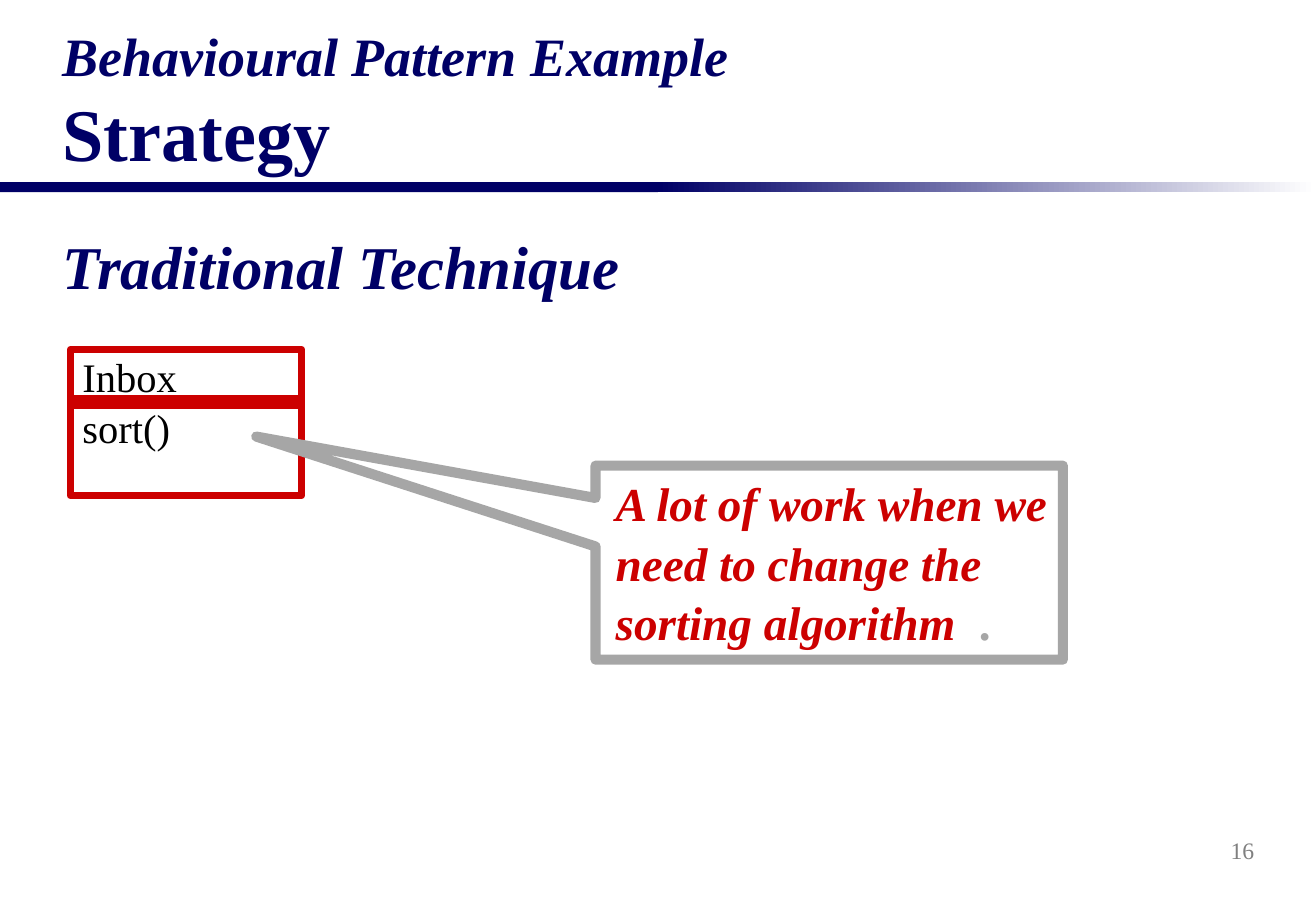
from dataclasses import dataclass

from lxml.etree import SubElement
from pptx import Presentation
from pptx.dml.color import RGBColor
from pptx.enum.shapes import MSO_CONNECTOR as Connector
from pptx.enum.shapes import MSO_SHAPE as Preset
from pptx.enum.text import MSO_ANCHOR as Anchor
from pptx.enum.text import PP_ALIGN as Align
from pptx.oxml.ns import qn
from pptx.shapes.autoshape import Shape
from pptx.slide import Slide
from pptx.util import Pt

FONT = "Times New Roman"
NAVY, RED, GRAY, WHITE = "000066", "CC0000", "A6A6A6", "FFFFFF"


@dataclass(frozen=True)
class Box:
    left: float
    top: float
    width: float
    height: float


@dataclass(frozen=True)
class Style:
    size: float
    color: str
    bold: bool = False
    italic: bool = False


@dataclass(frozen=True)
class Label:
    box: Box
    text: str
    styles: tuple[Style, ...]
    anchor: Anchor = Anchor.TOP
    align: Align = Align.LEFT
    space_before: float = 0


BAND_TOP, BAND_HEIGHT, BAND_WIDTH = 108, 6, 390
CLASS_BOX = Box(41.75, 207.25, 137, 86.5)
DIVIDER_TOP = 238.25
CALLOUT_BOX = Box(353, 276, 277, 115)

HEADING = Style(36, NAVY, bold=True, italic=True)
CLASS_TEXT = Style(24, "000000")
WARNING = Style(28, RED, bold=True, italic=True)

LABELS = (
    Label(Box(587.5, 486, 163, 36), "16", (Style(14, "808080"),),
          Anchor.MIDDLE, Align.RIGHT),
    Label(Box(30, 24, 720, 84), "Behavioural Pattern Example\vStrategy",
          (Style(32, NAVY, bold=True, italic=True), Style(44, NAVY, bold=True)),
          Anchor.BOTTOM),
    Label(Box(30, 132, 720, 54), "Traditional Technique", (HEADING,),
          space_before=7.2),
)


def rgb(color: str) -> RGBColor:
    return RGBColor.from_string(color)


def format_text(shape: Shape, styles: tuple[Style, ...]) -> None:
    runs = [run for paragraph in shape.text_frame.paragraphs for run in paragraph.runs]
    for run, style in zip(runs, styles):
        run.font.name = FONT
        run.font.size = Pt(style.size)
        run.font.bold = style.bold
        run.font.italic = style.italic
        run.font.color.rgb = rgb(style.color)


def add_label(slide: Slide, label: Label) -> None:
    box = label.box
    shape = slide.shapes.add_textbox(
        Pt(box.left), Pt(box.top), Pt(box.width), Pt(box.height))
    frame = shape.text_frame
    frame.word_wrap = True
    frame.vertical_anchor = label.anchor
    paragraph = frame.paragraphs[0]
    paragraph.text = label.text
    paragraph.alignment = label.align
    paragraph.space_before = Pt(label.space_before)
    format_text(shape, label.styles)


def add_block(slide: Slide, preset: Preset, box: Box) -> Shape:
    shape = slide.shapes.add_shape(
        preset, Pt(box.left), Pt(box.top), Pt(box.width), Pt(box.height))
    shape.shadow.inherit = False
    shape.fill.background()
    shape.line.fill.background()
    return shape


def fill_solid(shape: Shape, color: str) -> None:
    shape.fill.solid()
    shape.fill.fore_color.rgb = rgb(color)


def set_line(shape: Shape, color: str, width: float) -> None:
    shape.line.color.rgb = rgb(color)
    shape.line.width = Pt(width)


def align_lines(shape: Shape) -> None:
    shape.text_frame.vertical_anchor = Anchor.TOP
    for paragraph in shape.text_frame.paragraphs:
        paragraph.alignment = Align.LEFT
        paragraph.line_spacing = 1.05


def add_band(slide: Slide) -> None:
    solid, fading = (
        add_block(slide, Preset.RECTANGLE,
                  Box(index * BAND_WIDTH, BAND_TOP, BAND_WIDTH, BAND_HEIGHT))
        for index in range(2))
    fill_solid(solid, NAVY)
    fading.fill.gradient()
    fading.fill.gradient_angle = 0
    for stop, color in zip(fading.fill.gradient_stops, (NAVY, WHITE)):
        stop.color.rgb = rgb(color)


def add_class_box(slide: Slide) -> None:
    shape = add_block(slide, Preset.RECTANGLE, CLASS_BOX)
    set_line(shape, RED, 4.5)
    shape.text_frame.text = "Inbox\nsort()"
    shape.text_frame.margin_top = Pt(0.3)
    align_lines(shape)
    format_text(shape, (CLASS_TEXT, CLASS_TEXT))
    divider = slide.shapes.add_connector(
        Connector.STRAIGHT, Pt(CLASS_BOX.left), Pt(DIVIDER_TOP),
        Pt(CLASS_BOX.left + CLASS_BOX.width), Pt(DIVIDER_TOP))
    set_line(divider, RED, 8)
    SubElement(divider.element.spPr, qn("a:effectLst"))


def add_callout(slide: Slide) -> None:
    shape = add_block(slide, Preset.RECTANGULAR_CALLOUT, CALLOUT_BOX)
    shape.adjustments[0] = -1.226
    shape.adjustments[1] = -0.65
    fill_solid(shape, WHITE)
    set_line(shape, GRAY, 6)
    frame = shape.text_frame
    frame.word_wrap = True
    frame.margin_left = Pt(12)
    frame.text = "A lot of work when we need to change the sorting algorithm  "
    frame.paragraphs[0].add_run().text = "."
    align_lines(shape)
    format_text(shape, (WARNING, Style(28, GRAY, bold=True)))


def main() -> None:
    presentation = Presentation()
    presentation.slide_width = Pt(2 * BAND_WIDTH)
    presentation.slide_height = Pt(540)
    slide = presentation.slides.add_slide(presentation.slide_layouts[6])
    add_band(slide)
    for label in LABELS:
        add_label(slide, label)
    add_class_box(slide)
    add_callout(slide)
    presentation.save("out.pptx")


if __name__ == "__main__":
    main()
